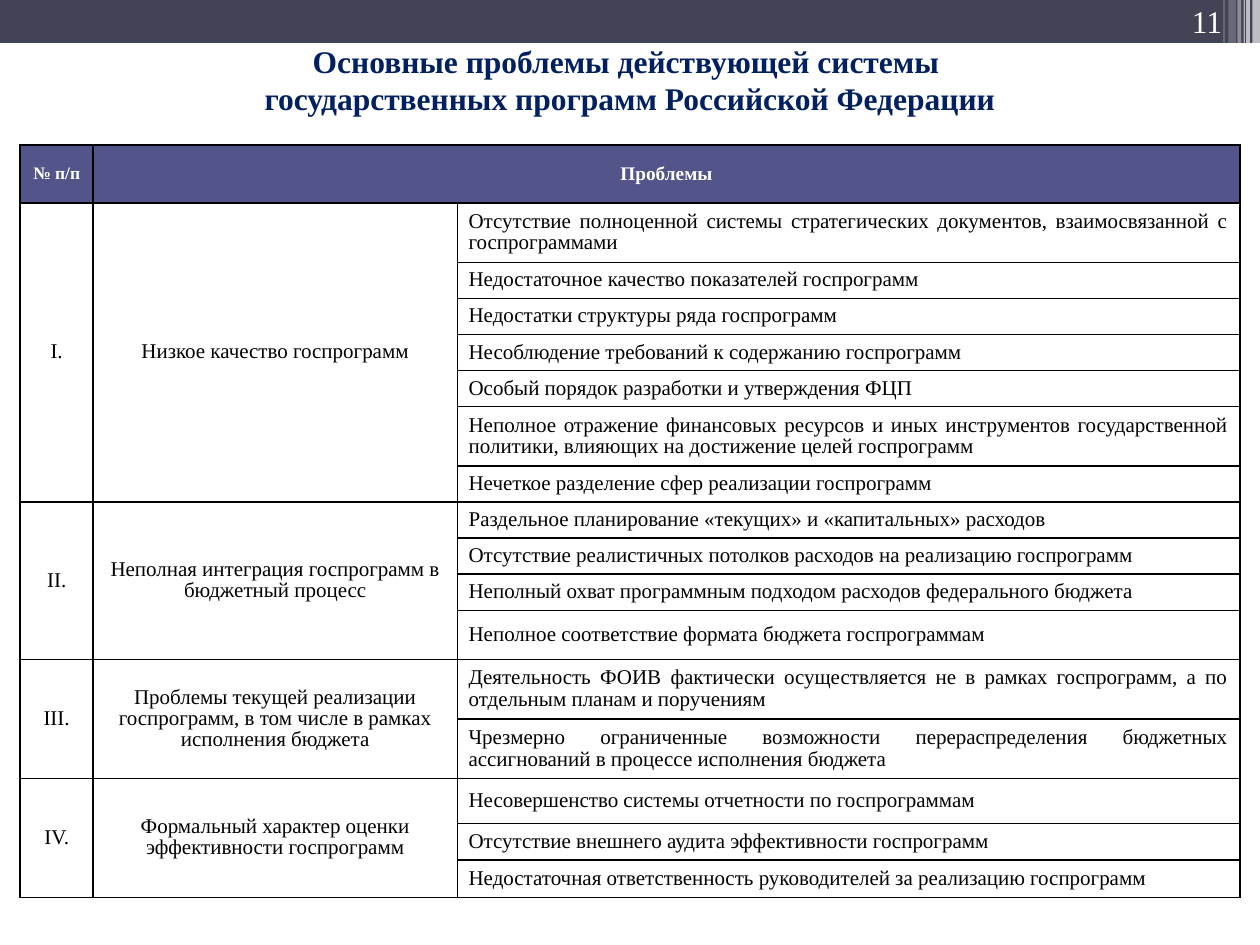
from lxml import etree
from pptx import Presentation
from pptx import util as u
from pptx.dml.color import RGBColor
from pptx.enum import shapes, text
from pptx.oxml import ns

FONT = "Times New Roman"
COLORS = {"bar": "424456", "white": "FFFFFF", "title": "002060",
          "head": "53548A", "black": "000000"}
STRIPES = [(9.94, 0.06, 0.68, 65), (9.89, 0.03, 0.68, 65),
           (9.87, 0.01, 0.68, 60), (9.82, 0.03, 0.68, 40),
           (9.75, 0.06, 0.64, 20), (9.71, 0.01, 0.64, 30)]
COLS = [0.58, 2.89, 6.21]
HEAD_HEIGHT = 0.46
SECTIONS = [
    ("I.", "Низкое качество госпрограмм", [
        ("Отсутствие полноценной системы стратегических документов, "
         "взаимосвязанной с госпрограммами", 0.46),
        ("Недостаточное качество показателей госпрограмм", 0.28),
        ("Недостатки структуры ряда госпрограмм", 0.28),
        ("Несоблюдение требований к содержанию госпрограмм", 0.28),
        ("Особый порядок разработки и утверждения ФЦП", 0.28),
        ("Неполное отражение финансовых ресурсов и иных инструментов "
         "государственной политики, влияющих на достижение целей госпрограмм", 0.46),
        ("Нечеткое разделение сфер реализации госпрограмм", 0.28)]),
    ("II.", "Неполная интеграция госпрограмм в бюджетный процесс", [
        ("Раздельное планирование «текущих» и «капитальных» расходов", 0.28),
        ("Отсутствие реалистичных потолков расходов на реализацию госпрограмм", 0.28),
        ("Неполный охват программным подходом расходов федерального бюджета", 0.28),
        ("Неполное соответствие формата бюджета госпрограммам", 0.39)]),
    ("III.", "Проблемы текущей реализации госпрограмм, "
             "в том числе в рамках исполнения бюджета", [
        ("Деятельность ФОИВ фактически осуществляется не в рамках госпрограмм, "
         "а по отдельным планам и поручениям", 0.46),
        ("Чрезмерно ограниченные возможности перераспределения бюджетных "
         "ассигнований в процессе исполнения бюджета", 0.46)]),
    ("IV.", "Формальный характер оценки эффективности госпрограмм", [
        ("Несовершенство системы отчетности по госпрограммам", 0.36),
        ("Отсутствие внешнего аудита эффективности госпрограмм", 0.28),
        ("Недостаточная ответственность руководителей за реализацию госпрограмм", 0.3)]),
]


def rgb(name):
    """Return the named colour."""
    return RGBColor.from_string(COLORS[name])


def style(p, size, color, bold=False, align=text.PP_ALIGN.CENTER):
    """Format one paragraph."""
    p.alignment = align
    p.font.name, p.font.size, p.font.bold = FONT, u.Pt(size), bold
    p.font.color.rgb = rgb(color)


def add_rect(s, box, color, alpha=100):
    """Add a plain rectangle, optionally transparent."""
    sp = s.shapes.add_shape(shapes.MSO_SHAPE.RECTANGLE, *map(u.Inches, box))
    sp.shadow.inherit = False
    sp.line.fill.background()
    sp.fill.solid()
    sp.fill.fore_color.rgb = rgb(color)
    if alpha < 100:
        clr = sp.fill._xPr.find(".//" + ns.qn("a:srgbClr"))
        etree.SubElement(clr, ns.qn("a:alpha"), val=str(alpha * 1000))


def add_header(s, x, y, w, h):
    """Add the top bar, its stripes and the page number."""
    add_rect(s, (x, y, w, h), "bar")
    for left, width, height, alpha in STRIPES:
        add_rect(s, (x + left, y, width, height), "white", alpha)
    tb = s.shapes.add_textbox(*map(u.Inches, (x + w - 0.66, y + 0.02, 0.48, 0.3)))
    tf = tb.text_frame
    tf.word_wrap = True
    tf.margin_left = tf.margin_right = tf.margin_top = tf.margin_bottom = 0
    tf.text = "11"
    style(tf.paragraphs[0], 18, "white")


def add_title(s, x, y, w, h):
    """Fill and place the title placeholder."""
    sp = s.shapes.title
    sp.left, sp.top, sp.width, sp.height = map(u.Inches, (x, y, w, h))
    tf = sp.text_frame
    tf.word_wrap = True
    tf.auto_size = text.MSO_AUTO_SIZE.NONE
    tf.vertical_anchor = text.MSO_ANCHOR.TOP
    tf.text = ("Основные проблемы действующей системы \v"
               "государственных программ Российской Федерации")
    style(tf.paragraphs[0], 18, "title", bold=True)


def add_borders(cell):
    """Draw thin black lines round a cell."""
    pr = cell._tc.get_or_add_tcPr()
    for i, side in enumerate(("lnL", "lnR", "lnT", "lnB")):
        ln = etree.Element(ns.qn("a:" + side), w=str(u.Pt(1)))
        fill = etree.SubElement(ln, ns.qn("a:solidFill"))
        etree.SubElement(fill, ns.qn("a:srgbClr"), val=COLORS["black"])
        pr.insert(i, ln)


def fill_head(cell, words, size):
    """Write a heading cell."""
    cell.text = words
    style(cell.text_frame.paragraphs[0], size, "white", bold=True)


def fill_body(cell, words, align, spacing):
    """Write a body cell."""
    cell.text = words
    p = cell.text_frame.paragraphs[0]
    p.line_spacing, p.space_after = spacing, u.Pt(6)
    style(p, 12, "black", align=align)


def add_problems(s, x, y, w, h):
    """Add the table of problems grouped by section."""
    heights = [HEAD_HEIGHT] + [size for *_, items in SECTIONS for _, size in items]
    table = s.shapes.add_table(len(heights), len(COLS),
                               *map(u.Inches, (x, y, w, h))).table
    for col, width in zip(table.columns, COLS):
        col.width = u.Inches(width)
    for row, height in zip(table.rows, heights):
        row.height = u.Inches(height)
    for i, row in enumerate(table.rows):
        for cell in row.cells:
            cell.vertical_anchor = text.MSO_ANCHOR.MIDDLE
            cell.margin_left = cell.margin_right = u.Inches(0.09)
            if i:
                cell.fill.background()
            else:
                cell.fill.solid()
                cell.fill.fore_color.rgb = rgb("head")
            add_borders(cell)
    fill_head(table.cell(0, 0), "№ п/п", 10)
    fill_head(table.cell(0, 1), "Проблемы", 11)
    table.cell(0, 1).merge(table.cell(0, 2))
    top = 1
    for number, name, items in SECTIONS:
        for col, words in enumerate((number, name)):
            fill_body(table.cell(top, col), words, text.PP_ALIGN.CENTER, 0.9)
            table.cell(top, col).merge(table.cell(top + len(items) - 1, col))
        for i, (words, _) in enumerate(items):
            fill_body(table.cell(top + i, 2), words, text.PP_ALIGN.JUSTIFY, 0.93)
        top += len(items)


def main():
    """Build the slide and save it."""
    prs = Presentation()
    prs.slide_width, prs.slide_height = u.Inches(10), u.Inches(7.5)
    s = prs.slides.add_slide(prs.slide_layouts[5])
    add_header(s, 0, 0, 10, 0.34)
    add_title(s, 0, 0.28, 10, 0.71)
    add_problems(s, 0.16, 1.15, 9.68, 5.87)
    prs.save("out.pptx")


if __name__ == "__main__":
    main()
